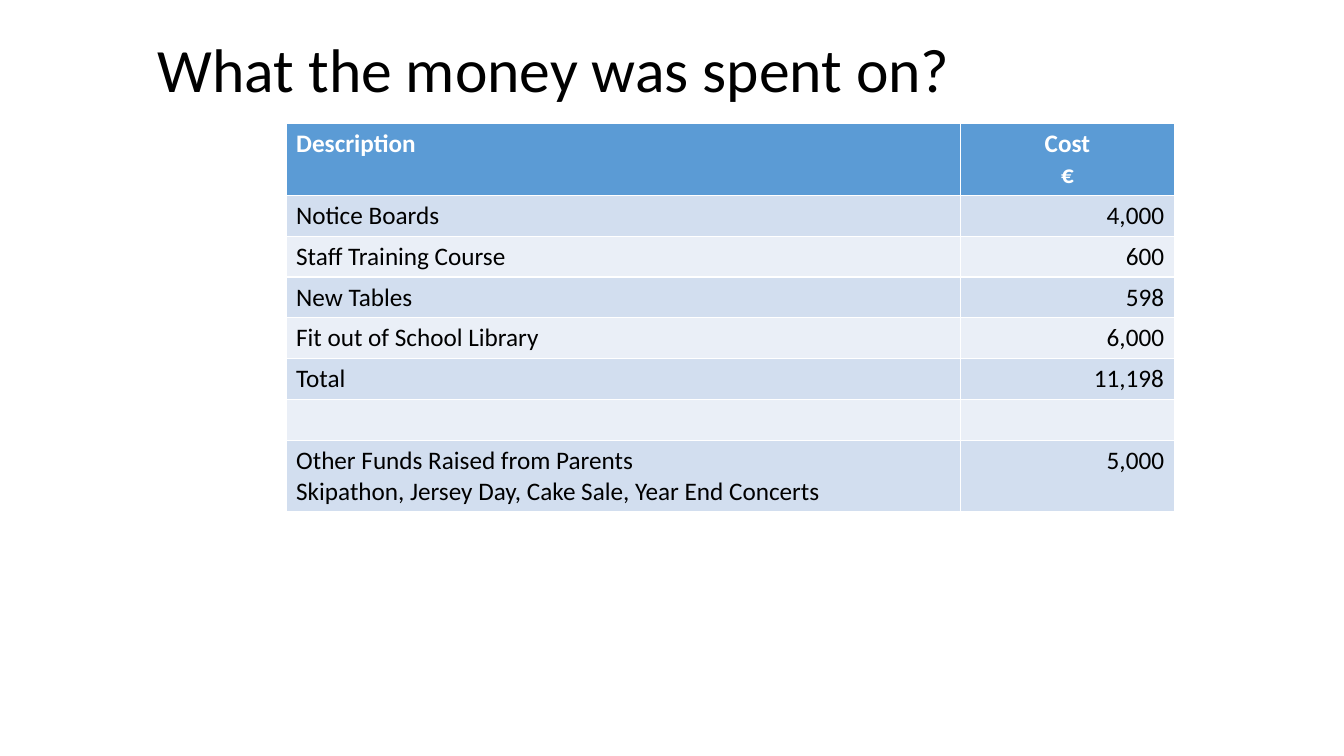
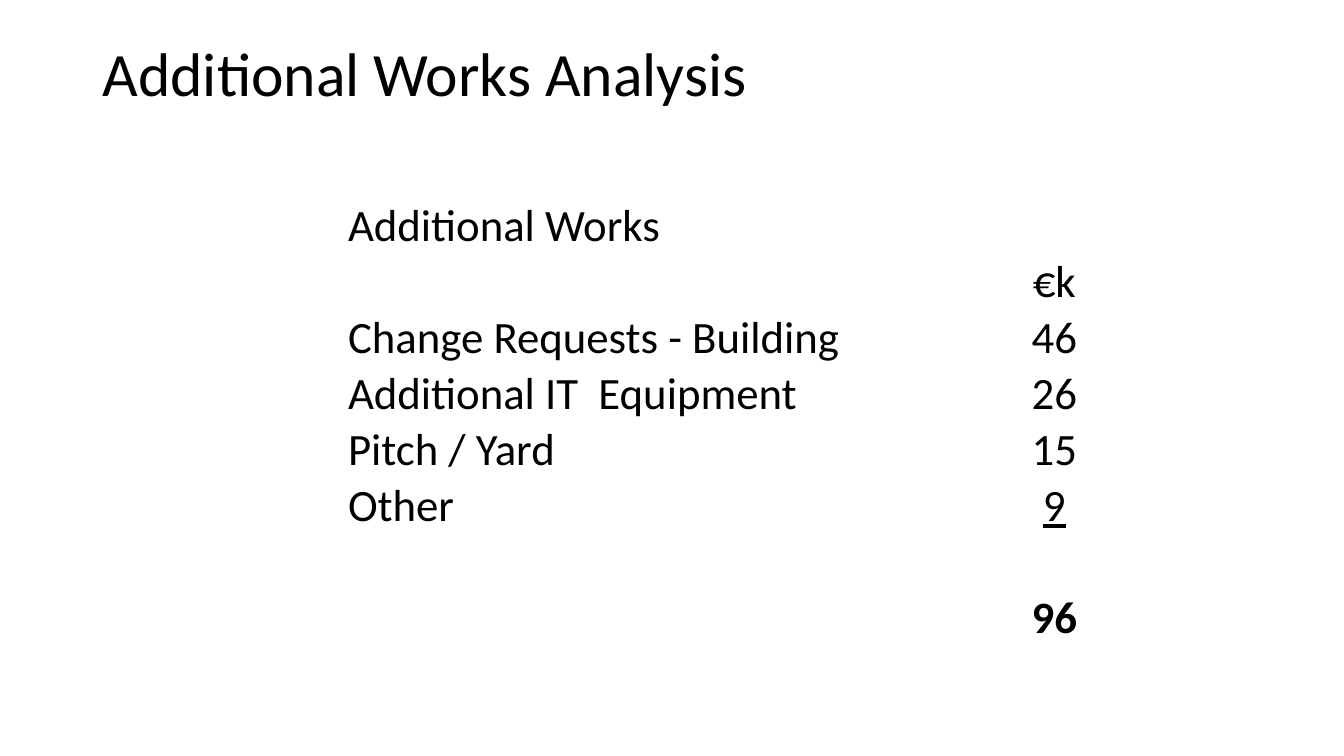
import pptx
import pptx.util
import pptx.dml.color
import pptx.enum.text

Cm = pptx.util.Cm
ALIGN = pptx.enum.text.PP_ALIGN
ANCHOR = pptx.enum.text.MSO_ANCHOR

FONT = "Calibri"
COLOURS = {
    "text": "000000",
    "header_text": "FFFFFF",
    "header": "5B9BD5",
    "band_dark": "D2DEEF",
    "band_light": "EAEFF7",
}
SPENDING = [
    ("Description", "Cost\n€"),
    ("Notice Boards", "4,000"),
    ("Staff Training Course", "600"),
    ("New Tables", "598"),
    ("Fit out of School Library", "6,000"),
    ("Total", "11,198"),
    ("", ""),
    ("Other Funds Raised from Parents\n"
     "Skipathon, Jersey Day, Cake Sale, Year End Concerts", "5,000"),
]
WORKS = [
    ("", ""),
    ("Additional Works", ""),
    ("", "€k"),
    ("Change Requests - Building", "46"),
    ("Additional IT  Equipment", "26"),
    ("Pitch / Yard", "15"),
    ("Other", "9"),
    ("", ""),
    ("", "96"),
]


def colour(name):
    return pptx.dml.color.RGBColor.from_string(COLOURS[name])


def write(frame, text, size, name="text", align=ALIGN.LEFT, bold=False, underline=False):
    for index, line in enumerate(text.split("\n")):
        para = frame.add_paragraph() if index else frame.paragraphs[0]
        para.alignment = align
        if not line:
            para.font.size = pptx.util.Pt(size)
            continue
        span = para.add_run()
        span.text = line
        span.font.name = FONT
        span.font.size = pptx.util.Pt(size)
        span.font.bold = bold
        span.font.underline = underline
        span.font.color.rgb = colour(name)


def add_title(page, text, left, top, anchor):
    box = page.shapes.add_textbox(Cm(left), Cm(top), Cm(29.2), Cm(3.68))
    frame = box.text_frame
    frame.word_wrap = True
    frame.vertical_anchor = anchor
    frame.margin_top = frame.margin_bottom = Cm(0.08)
    write(frame, text, 44)
    frame.paragraphs[0].line_spacing = 0.9


def add_grid(page, left, top, widths, heights):
    shape = page.shapes.add_table(len(heights), len(widths), Cm(left), Cm(top),
                                  Cm(sum(widths)), Cm(sum(heights)))
    table = shape.table
    table.horz_banding = False
    for column, width in zip(table.columns, widths):
        column.width = Cm(width)
    for row, height in zip(table.rows, heights):
        row.height = Cm(height)
    return table


def add_spending_table(page):
    heights = [1.8] + [1.03] * (len(SPENDING) - 2) + [1.8]
    table = add_grid(page, 7.21, 3.12, [17, 5.38], heights)
    for row, texts in enumerate(SPENDING):
        header = row == 0
        fill = "header" if header else "band_dark" if row % 2 else "band_light"
        aligns = (ALIGN.LEFT, ALIGN.CENTER if header else ALIGN.RIGHT)
        for column, (text, align) in enumerate(zip(texts, aligns)):
            cell = table.cell(row, column)
            cell.fill.solid()
            cell.fill.fore_color.rgb = colour(fill)
            write(cell.text_frame, text, 18, "header_text" if header else "text",
                  align, bold=header)


def add_works_table(page):
    table = add_grid(page, 8.74, 3.58, [14.86, 5.94], [1.41] * len(WORKS))
    table.first_row = False
    total_row = len(WORKS) - 1
    for row, texts in enumerate(WORKS):
        for column, (text, align) in enumerate(zip(texts, (ALIGN.LEFT, ALIGN.CENTER))):
            cell = table.cell(row, column)
            cell.fill.background()
            cell.vertical_anchor = ANCHOR.BOTTOM
            cell.margin_left = cell.margin_right = cell.margin_top = Cm(0.03)
            cell.margin_bottom = 0
            last_item = row == total_row - 2 and column == 1
            write(cell.text_frame, text, 32, align=align,
                  bold=row == total_row, underline=last_item)


def main():
    deck = pptx.Presentation()
    deck.slide_width, deck.slide_height = Cm(33.87), Cm(19.05)
    blank = deck.slide_layouts[6]

    page = deck.slides.add_slide(blank)
    add_title(page, "What the money was spent on?", 3.73, 0, ANCHOR.MIDDLE)
    add_spending_table(page)

    page = deck.slides.add_slide(blank)
    add_title(page, "Additional Works Analysis", 2.34, 1.02, ANCHOR.TOP)
    add_works_table(page)

    deck.save("out.pptx")


if __name__ == "__main__":
    main()
